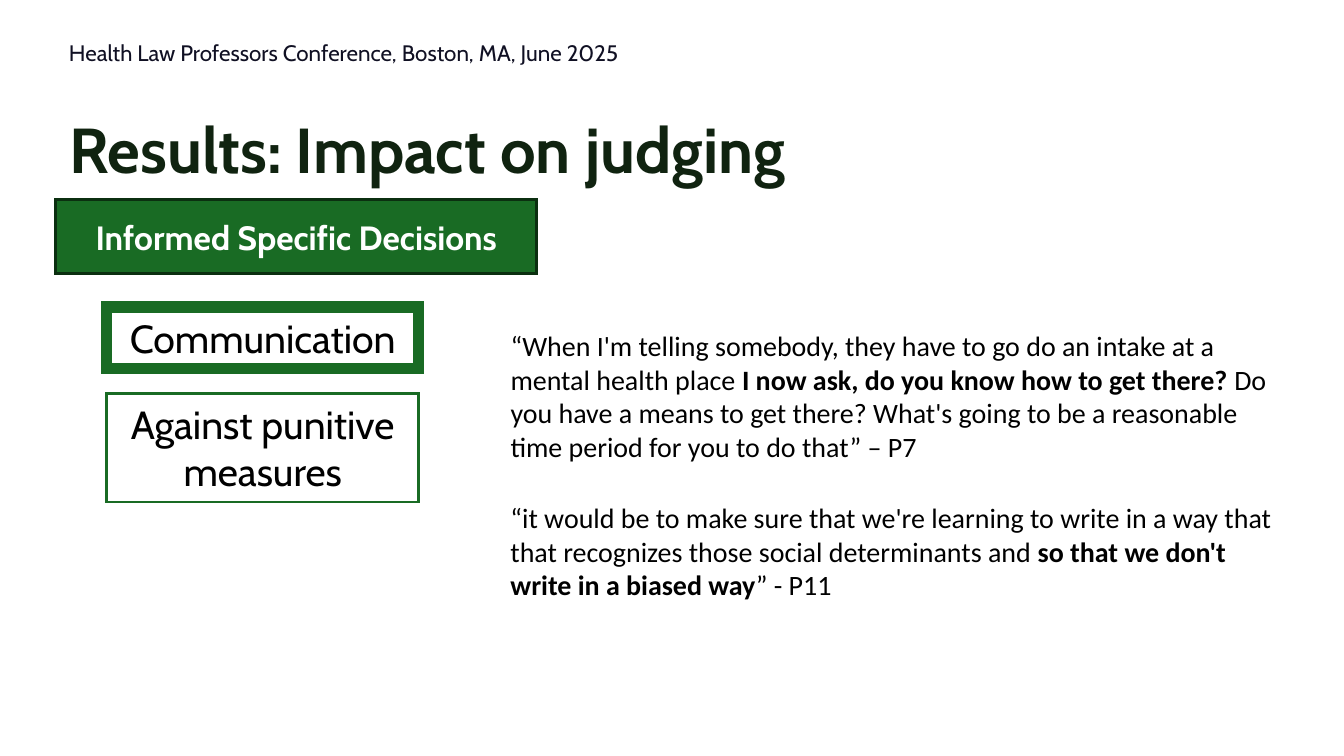
import pptx
import pptx.util
import pptx.dml.color
import pptx.enum.shapes
import pptx.enum.text
import pptx.oxml.ns
import lxml.etree

PX = 4572  # EMU per px, at 200 px to the inch
Pt = pptx.util.Pt
ALIGN = pptx.enum.text.PP_ALIGN
ANCHOR = pptx.enum.text.MSO_ANCHOR
FIT = pptx.enum.text.MSO_AUTO_SIZE

THEME = {
    "white": "FFFFFF", "black": "000000", "green": "196B24",
    "dark_green": "0B2F10", "title": "102310", "header": "101023",
    "heading_font": "Cabin", "quote_font": "Calibri",
    "title_size": 34, "banner_size": 18, "theme_size": 21,
    "quote_size": 15, "header_size": 12,
}

HEADER = "Health Law Professors Conference, Boston, MA, June 2025"
TITLE = "Results: Impact on judging"
BANNER = "Informed Specific Decisions"
# text, top, height, border width in points
THEMES = [
    ("Communication", 457, 91, 6),
    ("Against punitive measures", 585, 162, 1.5),
]
# top, width, height, runs as (text, bold)
QUOTES = [
    (479, 1204, 222, [
        ("“When I'm telling somebody, they have to go do an intake at a mental health place ", False),
        ("I now ask, do you know how to get there? ", True),
        ("Do you have a means to get there? What's going to be a reasonable "
         "time period for you to do that” – P7", False),
    ]),
    (735, 1174, 172, [
        ("“it would be to make sure that we're learning to write in a way that "
         "that recognizes those social determinants and ", False),
        ("so that we don't write in a biased way", True),
        ("”\u00a0- P11", False),
    ]),
]
MARGIN, THEME_LEFT, THEME_WIDTH, QUOTE_LEFT = 83, 159, 464, 740


def color(name):
    return pptx.dml.color.RGBColor.from_string(THEME[name])


def emu(*lengths):
    return [n * PX for n in lengths]


def write(sp, runs, size, ink, font="heading_font", align=ALIGN.LEFT,
          anchor=ANCHOR.MIDDLE, inset=20, fit=FIT.NONE):
    """Fill one paragraph with (text, bold) runs and return it."""
    tf = sp.text_frame
    tf.word_wrap = True
    tf.auto_size = fit
    tf.vertical_anchor = anchor
    tf.margin_left = tf.margin_right = 20 * PX
    tf.margin_top = tf.margin_bottom = inset * PX
    p = tf.paragraphs[0]
    p.alignment = align
    for text, bold in runs:
        r = p.add_run()
        r.text = text
        r.font.name = THEME[font]
        r.font.size = Pt(THEME[size])
        r.font.bold = bold
        r.font.color.rgb = color(ink)
    return p


def add_box(s, at, fill, line, width):
    """Add a filled rectangle whose border has square corners."""
    sp = s.shapes.add_shape(pptx.enum.shapes.MSO_SHAPE.RECTANGLE, *emu(*at))
    sp.shadow.inherit = False
    sp.fill.solid()
    sp.fill.fore_color.rgb = color(fill)
    sp.line.color.rgb = color(line)
    sp.line.width = Pt(width)
    ln = sp.line.fill._xPr
    lxml.etree.SubElement(ln, pptx.oxml.ns.qn("a:miter"), lim="800000")
    return sp


def main():
    prs = pptx.Presentation()
    prs.slide_width, prs.slide_height = emu(2000, 1125)
    s = prs.slides.add_slide(prs.slide_layouts[5])
    s.background.fill.solid()
    s.background.fill.fore_color.rgb = color("white")

    title = s.shapes.title
    title.left, title.top, title.width, title.height = emu(MARGIN, 153, 1832, 144)
    write(title, [(TITLE, True)], "title_size", "title", anchor=ANCHOR.BOTTOM)

    banner = add_box(s, (MARGIN, 297, 716, 110), "green", "dark_green", 1.5)
    write(banner, [(BANNER, True)], "banner_size", "white", align=ALIGN.CENTER)

    for text, top, height, border in THEMES:
        sp = add_box(s, (THEME_LEFT, top, THEME_WIDTH, height), "white", "green", border)
        write(sp, [(text, False)], "theme_size", "black", align=ALIGN.CENTER,
              inset=10, fit=FIT.SHAPE_TO_FIT_TEXT)

    for top, width, height, runs in QUOTES:
        sp = s.shapes.add_textbox(*emu(QUOTE_LEFT, top, width, height))
        write(sp, runs, "quote_size", "black", font="quote_font",
              anchor=ANCHOR.TOP, inset=10, fit=FIT.SHAPE_TO_FIT_TEXT)

    header = s.shapes.add_textbox(*emu(MARGIN, 46, 916, 70))
    p = write(header, [(HEADER, False)], "header_size", "header")
    p.line_spacing = 0.9
    p.space_after = Pt(12)

    prs.save("out.pptx")


if __name__ == "__main__":
    main()
